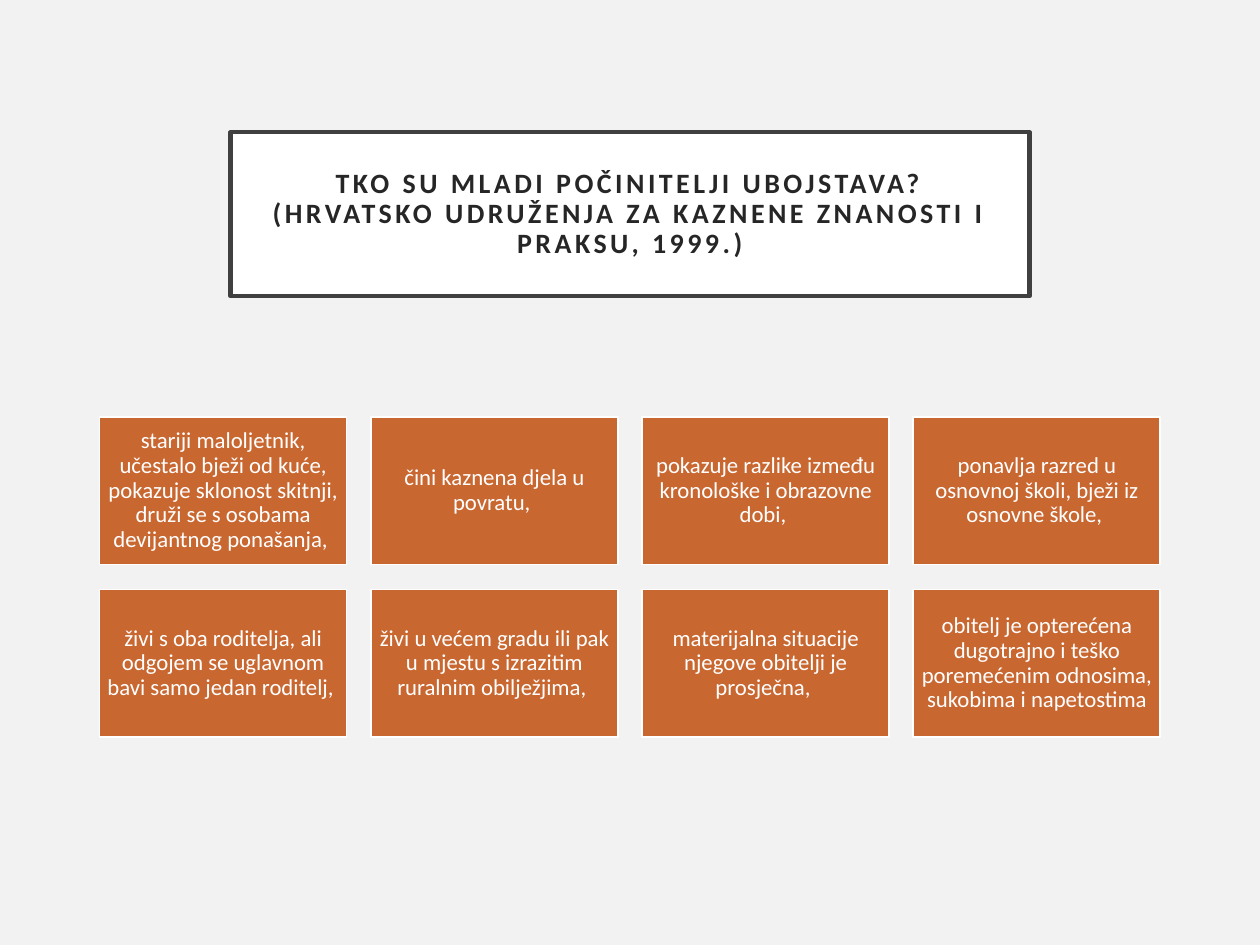
from dataclasses import dataclass

from pptx import Presentation
from pptx.dml.color import RGBColor
from pptx.enum.shapes import MSO_SHAPE
from pptx.enum.text import MSO_ANCHOR, MSO_AUTO_SIZE, PP_ALIGN
from pptx.shapes.autoshape import Shape
from pptx.slide import Slide
from pptx.text.text import _Run as Run
from pptx.util import Inches, Pt

FONT = "Calibri"
COLS = 4
LEFT, TOP = 0.79, 3.31
WIDTH, HEIGHT = 1.96, 1.17
STEP_X, STEP_Y = 2.153, 1.37

TITLE = ("TKO SU MLADI POČINITELJI UBOJSTAVA? "
         "(HRVATSKO UDRUŽENJA ZA KAZNENE ZNANOSTI I PRAKSU, 1999.)")
TRAITS = [
    "stariji maloljetnik, učestalo bježi od kuće, pokazuje sklonost skitnji, "
    "druži se s osobama devijantnog ponašanja, ",
    "čini kaznena djela u povratu, ",
    "pokazuje razlike između kronološke i obrazovne dobi, ",
    "ponavlja razred u osnovnoj školi, bježi iz osnovne škole, ",
    "živi s oba roditelja, ali odgojem se uglavnom bavi samo jedan roditelj, ",
    "živi u većem gradu ili pak u mjestu s izrazitim ruralnim obilježjima, ",
    "materijalna situacije njegove obitelji je prosječna, ",
    "obitelj je opterećena dugotrajno i teško poremećenim odnosima, "
    "sukobima i napetostima",
]


@dataclass(frozen=True)
class Style:
    fill: str
    line: str
    weight: float
    inset: float
    size: float
    ink: str
    bold: bool = False


HEAD = Style("FFFFFF", "404040", 2.5, 0.2, 16, "262626", True)
CARD = Style("C96731", "FFFFFF", 1, 0.05, 13, "FFFFFF")


def color(code: str) -> RGBColor:
    return RGBColor.from_string(code)


def dress(shape: Shape, text: str, style: Style) -> Run:
    """Format the box, write its text and return the run."""
    shape.fill.solid()
    shape.fill.fore_color.rgb = color(style.fill)
    shape.line.color.rgb = color(style.line)
    shape.line.width = Pt(style.weight)
    frame = shape.text_frame
    frame.word_wrap = True
    frame.auto_size = MSO_AUTO_SIZE.NONE
    frame.vertical_anchor = MSO_ANCHOR.MIDDLE
    frame.margin_left = frame.margin_right = Inches(style.inset)
    frame.margin_top = frame.margin_bottom = Inches(style.inset)
    para = frame.paragraphs[0]
    para.alignment = PP_ALIGN.CENTER
    para.line_spacing = 0.9
    run = para.add_run()
    run.text = text
    run.font.name = FONT
    run.font.size = Pt(style.size)
    run.font.bold = style.bold
    run.font.color.rgb = color(style.ink)
    return run


def add_title(slide: Slide) -> None:
    title = slide.shapes.title
    title.left, title.top = Inches(1.83), Inches(1.05)
    title.width, title.height = Inches(6.34), Inches(1.3)
    run = dress(title, TITLE, HEAD)
    run.font._element.set("spc", "200")


def add_cards(slide: Slide) -> None:
    for index, trait in enumerate(TRAITS):
        row, col = divmod(index, COLS)
        card = slide.shapes.add_shape(
            MSO_SHAPE.RECTANGLE,
            Inches(LEFT + col * STEP_X), Inches(TOP + row * STEP_Y),
            Inches(WIDTH), Inches(HEIGHT))
        card.shadow.inherit = False
        dress(card, trait, CARD)


def main() -> None:
    deck = Presentation()
    deck.slide_width, deck.slide_height = Inches(10), Inches(7.5)
    slide = deck.slides.add_slide(deck.slide_layouts[5])
    back = slide.background.fill
    back.solid()
    back.fore_color.rgb = color("F2F2F2")
    add_title(slide)
    add_cards(slide)
    deck.save("out.pptx")


if __name__ == "__main__":
    main()
